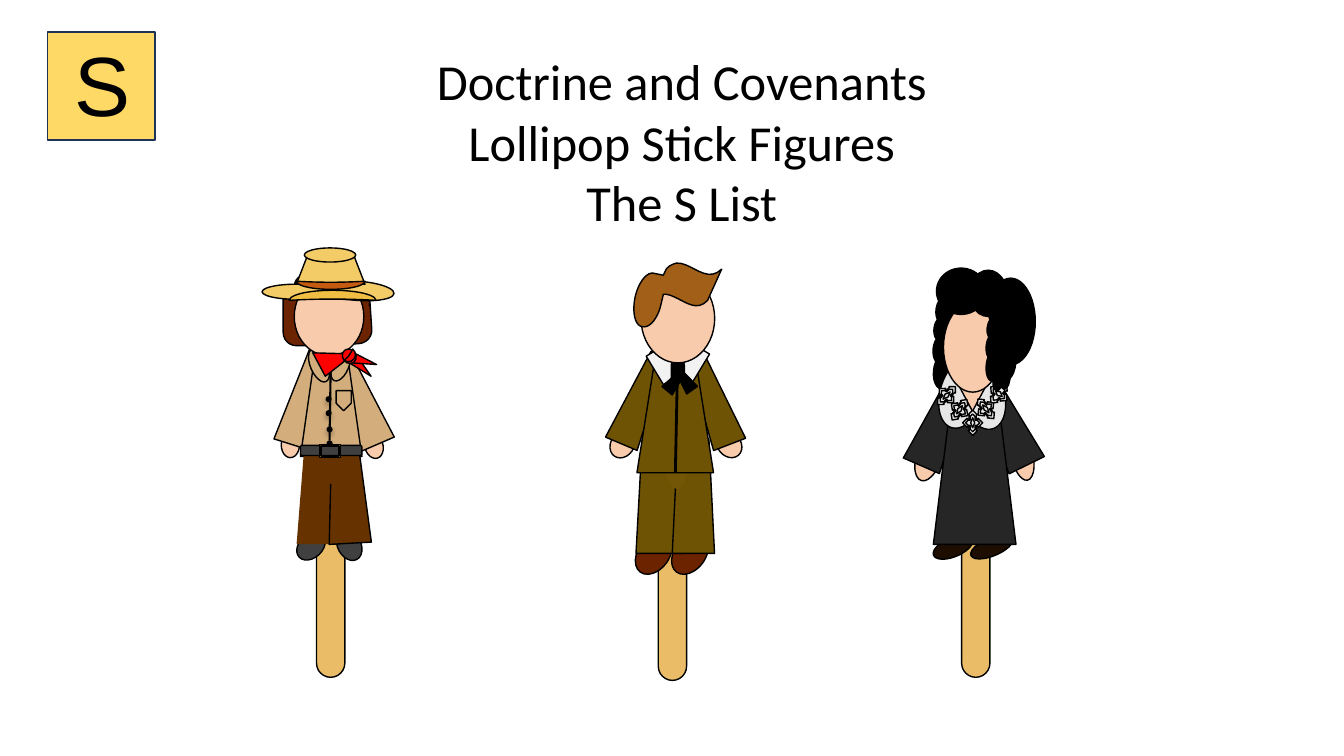
from lxml.etree import SubElement
from pptx import Presentation
from pptx.dml.color import RGBColor
from pptx.enum.shapes import MSO_CONNECTOR, MSO_SHAPE
from pptx.enum.text import PP_ALIGN
from pptx.oxml.ns import qn
from pptx.util import Pt

TITLE = ["Doctrine and Covenants", "Lollipop Stick Figures", "The S List"]
BLACK, SKIN, STICK = "000000", "F8CBAD", "EABC68"
SUIT, MAHOGANY, COLLAR = "6F5305", "6C2400", "F2F2F2"
DRESS, BOOT, LACE = "262626", "1D0E01", "E7E6E6"
SHIRT, PANTS, LEATHER, STRAW, RED = "D3AD7B", "663300", "404040", "F3CB67", "FF0000"
CURL = "9C6F34"

OVAL, TRAP, MOON = MSO_SHAPE.OVAL, MSO_SHAPE.TRAPEZOID, MSO_SHAPE.MOON
ROUND, LOCK = MSO_SHAPE.ROUNDED_RECTANGLE, MSO_SHAPE.ROUND_2_DIAG_RECTANGLE
TRI, CHORD, CLOUD = MSO_SHAPE.ISOSCELES_TRIANGLE, MSO_SHAPE.CHORD, MSO_SHAPE.CLOUD
LAPEL, TEAR = MSO_SHAPE.FLOWCHART_MANUAL_INPUT, MSO_SHAPE.TEAR
CROSS, DIAMOND = MSO_SHAPE.QUAD_ARROW, MSO_SHAPE.DIAMOND

PLAIN = {"line": None}
LEG, SLEEVE, TIP, BRIM = {"adj": [0.132]}, {"adj": [0.176]}, {"adj": [0.126]}, {"adj": [0.875]}
WAVE, WAVE_FLIP = {"adj": [0.5, 0]}, {"adj": [0.5, 0], "flip": "h"}
PLAIN_FLIP = {"line": None, "flip": "h"}
COLLAR_ARC = {"adj": [27, 134.135]}

STICKS = [(226.1, 324), (470.2, 326.2), (686.9, 324)]
STICK_SIZE = (20.2, 159.8)

HAIR_START = (483.1, 187.9)
HAIR = [
    [(493.9, 187.2), (504.7, 203), (515.5, 192.2)],
    [(505.4, 214.6)],
    [(496.1, 224.6), (486, 211.7), (475.9, 210.2)],
    [(473.8, 210.2)], [(472.3, 216.7)],
    [(470.2, 226.8), (464.4, 234.7), (458.6, 233.3)],
    [(453.6, 232.6), (451.4, 223.2), (453.6, 212.4)],
    [(455.8, 202.3), (461.5, 194.4), (466.6, 195.1)],
    [(473.8, 196.6)], [(475.9, 192.2)],
    [(478.1, 189.4), (481, 188.6), HAIR_START],
]

SUIT_MAN = [
    (OVAL, 436.3, 307.4, 16.6, 20.2, 34, SKIN),
    (OVAL, 512.6, 307.4, 16.6, 20.2, 320.3, SKIN),
    (OVAL, 455.8, 379.4, 22.3, 32.4, 36.3, MAHOGANY),
    (OVAL, 481.7, 379.4, 22.3, 32.4, 36.3, MAHOGANY),
    (TRAP, 454.3, 313.9, 33.8, 81.4, 0, SUIT, LEG),
    (TRAP, 480.2, 313.9, 30.2, 81.4, 0, SUIT, LEG),
    (OVAL, 475.9, 316.8, 15.1, 32.4, 0, "745706", PLAIN),
    (TRAP, 445, 250.6, 24.5, 69.1, 22.9, SUIT),
    (TRAP, 496.8, 252, 24.5, 67.7, 339, SUIT),
    (TRAP, 455, 251.3, 54.7, 86.4, 0, SUIT),
    (OVAL, 470.2, 226.8, 25.9, 41, 0, SKIN),
    (LAPEL, 480.2, 254.2, 27.4, 13.7, 121.2, COLLAR, {"flip": "v"}),
    (LAPEL, 463, 252, 23.8, 16.6, 238.8, COLLAR, {"flip": "hv"}),
    (OVAL, 457.9, 195.8, 52.6, 63.4, 0, SKIN),
    ("line", 483.8, 270, 482.4, 337.7, 2),
    ("hair", HAIR_START, HAIR, "A15F17"),
    (TRAP, 485.3, 265, 9.4, 15.1, 324.5, BLACK),
    (TRAP, 476.6, 265.7, 9.4, 15.1, 39.3, BLACK),
    (ROUND, 479.5, 259.2, 9.4, 12.2, 0, BLACK),
]

ORNAMENTS = [(676.1, 282.6, 14.4, 18, 44.7), (685.4, 292.7, 14.4, 18, 35.8),
             (694.8, 302, 14.4, 18, 0), (704.2, 292, 14.4, 18, 321.1),
             (713.5, 281.2, 17.3, 15.1, 310.2)]
LAYERS = [(CROSS, 1, 1, {"adj": [0.358, 0.225, 0.225]}),
          (CROSS, 0.7, 0.7, {"adj": [0.358, 0.225, 0.225]}),
          (DIAMOND, 0.2, 0.4, {})]
LACEWORK = [(k, cx - w * fw / 2, cy - h * fh / 2, w * fw, h * fh, rot, LACE, opts)
            for cx, cy, w, h, rot in ORNAMENTS for k, fw, fh, opts in LAYERS]

WOMAN = [
    (OVAL, 704.2, 198.7, 35.3, 61.9, 0, BLACK),
    (CLOUD, 641.5, 229, 81.4, 32.4, 276.1, BLACK),
    (OVAL, 702, 374.4, 13, 32.4, 67.5, BOOT),
    (OVAL, 673.9, 375.8, 13.7, 30.2, 67.5, BOOT),
    (OVAL, 722.9, 309.6, 15.1, 33.8, 348, SKIN),
    (OVAL, 654.5, 310.3, 17.3, 33.8, 17.6, SKIN),
    (TRAP, 702, 257.8, 28.1, 78.5, 333.8, DRESS),
    (TRAP, 658.1, 265, 28.1, 70.6, 23.4, DRESS),
    (TRAP, 666.7, 267.8, 59, 121, 0, DRESS),
    (TRI, 677.5, 262.8, 35.3, 33.1, 180, SKIN),
    (CHORD, 671.8, 253.4, 31.7, 53.3, 17.7, LACE, COLLAR_ARC),
    (CHORD, 685.4, 254.2, 31.7, 53.3, 342.3, LACE, {**COLLAR_ARC, "flip": "h"}),
    *LACEWORK,
    (OVAL, 673.9, 216, 41.8, 64.1, 0, SKIN),
    (OVAL, 668.9, 191.5, 35.3, 33.1, 0, BLACK),
    (OVAL, 692.6, 193, 26.6, 33.1, 0, BLACK),
    (CLOUD, 680.4, 231.1, 72, 24.5, 276.1, BLACK),
]

BUTTONS = [(OVAL, x, y, 4.3, 4.3, 0, BLACK, {"line": None, "shadow": True})
           for x, y in [(232.6, 283), (232.6, 293), (233.3, 304.6), (233.3, 314.6)]]

COWBOY = [
    (LOCK, 231.8, 190.8, 25.2, 24.5, 345.5, MAHOGANY, WAVE_FLIP),
    (LOCK, 234.7, 215.3, 41, 19.4, 86.2, MAHOGANY, WAVE_FLIP),
    (OVAL, 241.9, 199.4, 12.2, 17.3, 52.9, CURL, PLAIN_FLIP),
    (LOCK, 210.2, 199.4, 25.2, 18, 24.9, CURL, WAVE),
    (LOCK, 191.5, 217.4, 40.3, 18.7, 270, MAHOGANY, WAVE),
    (OVAL, 213.8, 203.8, 10.1, 15.8, 317.5, CURL, PLAIN),
    (LOCK, 237.6, 195.8, 23.8, 25.9, 80.1, MAHOGANY, WAVE),
    (LOCK, 210.2, 196.6, 33.8, 18.7, 2.8, MAHOGANY, {"adj": [0.447, 0]}),
    (OVAL, 236.9, 199.4, 13, 15.8, 12.7, CURL, PLAIN),
    (OVAL, 229, 191.5, 23.8, 24.5, 63.7, MAHOGANY, PLAIN_FLIP),
    (OVAL, 212.4, 201.6, 16.6, 24.5, 63.7, MAHOGANY, PLAIN_FLIP),
    (OVAL, 244.1, 211.7, 21.6, 17.3, 63.7, MAHOGANY, PLAIN_FLIP),
    (OVAL, 213.8, 378.7, 16.6, 23, 47.4, LEATHER),
    (OVAL, 241.2, 378, 16.6, 23, 331.7, LEATHER),
    (OVAL, 200.9, 308.9, 13, 18, 0, SKIN),
    (OVAL, 260.6, 309.6, 13, 18, 344.8, SKIN),
    (TRAP, 238.3, 248.4, 30.2, 72.7, 336.7, SHIRT, SLEEVE),
    (TRAP, 205.9, 247, 30.2, 72.7, 17.5, SHIRT, SLEEVE),
    (TRAP, 214.6, 249.1, 43.9, 77, 0, SHIRT),
    *BUTTONS,
    (TRAP, 212.4, 321.1, 30.2, 67, 0, PANTS, {**SLEEVE, "line": PANTS}),
    (TRAP, 233.3, 321.1, 30.2, 67, 356.9, PANTS, SLEEVE),
    (OVAL, 223.2, 322.6, 27.4, 23, 0, PANTS, PLAIN),
    (ROUND, 214.6, 318.2, 43.9, 7.2, 0, LEATHER),
    (MSO_SHAPE.FRAME, 228.2, 317.5, 15.1, 9.4, 0, "FFC000"),
    (TRI, 218.9, 243.4, 33.8, 25.9, 180, "C5E0B4"),
    (CHORD, 221.8, 248.4, 12.2, 25.2, 336.9, SHIRT),
    (CHORD, 237.6, 249.8, 11.5, 23, 23.1, SHIRT, {"flip": "h"}),
    (OVAL, 210.2, 198, 49.7, 56.2, 0, SKIN),
    ("line", 236.2, 264.2, 235.4, 314.6, 1.5),
    (MSO_SHAPE.PENTAGON, 238.3, 280.8, 14.4, 10.8, 90, SHIRT),
    (TEAR, 230.4, 200.9, 51.1, 13.7, 184.2, STRAW),
    (TEAR, 187.2, 203, 49, 10.8, 0, STRAW),
    (MOON, 234, 180, 7.2, 61.9, 90, "F0BE42", BRIM),
    (TRAP, 211.7, 180.7, 49, 22.3, 0, STRAW, {"adj": [0.387]}),
    (MOON, 233.3, 179.3, 5.8, 49, 90, "C55A11", {**BRIM, "flip": "hv"}),
    (OVAL, 217.4, 177.1, 36.7, 10.1, 0, STRAW),
    (TRI, 223.9, 244.1, 25.9, 18.7, 322, RED, TIP),
    (TRI, 252, 252.7, 8.6, 20.2, 142, RED, TIP),
    (TRI, 254.2, 249.1, 8.6, 20.2, 114.1, RED, TIP),
    (OVAL, 244.8, 249.1, 9.4, 10.8, 322, RED),
    (MOON, 248.4, 249.8, 5, 10.1, 216.8, RED, BRIM),
]

BADGE = [(MSO_SHAPE.RECTANGLE, 33.8, 23, 77, 77, 0, "FFD966", {"line": "1E3256"})]


def rgb(color):
    return RGBColor.from_string(color)


def paint(s, fill, line=BLACK):
    s.shadow.inherit = False
    s.fill.solid()
    s.fill.fore_color.rgb = rgb(fill)
    if line:
        s.line.color.rgb, s.line.width = rgb(line), Pt(1)
    else:
        s.line.fill.background()


def add_part(shapes, kind, x, y, w, h, rot, fill, opts={}):
    s = shapes.add_shape(kind, Pt(x), Pt(y), Pt(w), Pt(h))
    s.rotation = rot
    paint(s, fill, opts.get("line", BLACK))
    for i, value in enumerate(opts.get("adj", [])):
        s.adjustments[i] = value
    for axis in opts.get("flip", ""):
        s._element.spPr.xfrm.set("flip" + axis.upper(), "1")
    if "shadow" in opts:
        effects = s._element.spPr.find(qn("a:effectLst"))
        shade = SubElement(effects, qn("a:outerShdw"), blurRad=str(Pt(3.5)),
                           dist=str(Pt(2.2)), dir="5400000", rotWithShape="0")
        SubElement(SubElement(shade, qn("a:srgbClr"), val=BLACK), qn("a:alpha"), val="32000")


def add_seam(shapes, x1, y1, x2, y2, width):
    s = shapes.add_connector(MSO_CONNECTOR.STRAIGHT, Pt(x1), Pt(y1), Pt(x2), Pt(y2))
    s.line.color.rgb, s.line.width = rgb(BLACK), Pt(width)
    SubElement(s._element.spPr, qn("a:effectLst"))


def add_hair(shapes, start, segments, fill, steps=10):
    points, last = [], start
    for seg in segments:
        if len(seg) == 3:
            for t in [i / steps for i in range(1, steps + 1)]:
                weights = ((1 - t) ** 3, 3 * t * (1 - t) ** 2, 3 * t * t * (1 - t), t ** 3)
                points.append(tuple(sum(k * p[a] for k, p in zip(weights, [last, *seg]))
                                    for a in (0, 1)))
        else:
            points += seg
        last = seg[-1]
    fb = shapes.build_freeform(*map(Pt, start))
    fb.add_line_segments([(Pt(x), Pt(y)) for x, y in points], close=True)
    paint(fb.convert_to_shape(), fill)


def add_text(shapes, box, lines, align, font):
    tf = shapes.add_textbox(*map(Pt, box)).text_frame
    tf.word_wrap = True
    for i, line in enumerate(lines):
        p = tf.paragraphs[0] if i == 0 else tf.add_paragraph()
        p.alignment = align
        r = p.add_run()
        r.text = line
        r.font.color.rgb = rgb(BLACK)
        for name, value in font.items():
            setattr(r.font, name, value)


prs = Presentation()
prs.slide_width, prs.slide_height = Pt(960), Pt(540)
shapes = prs.slides.add_slide(prs.slide_layouts[6]).shapes
add_text(shapes, (282.2, 32.4, 409.7, 181.4), TITLE, PP_ALIGN.CENTER,
         {"name": "Calibri", "size": Pt(36)})
for x, y in STICKS:
    add_part(shapes, ROUND, x, y, *STICK_SIZE, 0, STICK, {"adj": [0.5]})
DRAW = {"line": add_seam, "hair": add_hair}
for figure in (SUIT_MAN, WOMAN, COWBOY, BADGE):
    group = shapes.add_group_shape().shapes
    for part in figure:
        if part[0] in DRAW:
            DRAW[part[0]](group, *part[1:])
        else:
            add_part(group, *part)
add_text(group, (46.1, 19.4, 58.3, 79.9), ["S"], PP_ALIGN.LEFT,
         {"name": "Arial", "size": Pt(60)})
prs.save("out.pptx")
